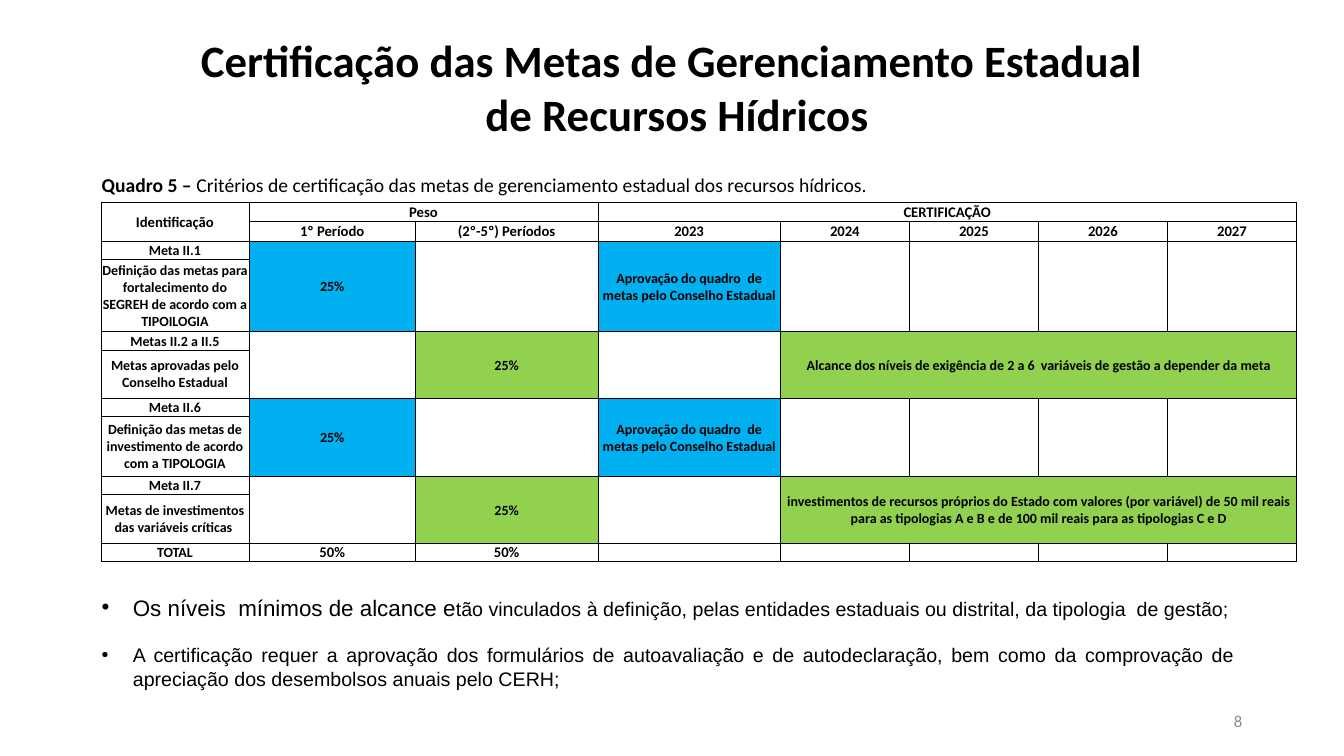
from lxml import etree
from pptx import Presentation
from pptx import util as u
from pptx.dml.color import RGBColor
from pptx.enum import text
from pptx.oxml import ns

BLACK = RGBColor(0x00, 0x00, 0x00)
WHITE = RGBColor(0xFF, 0xFF, 0xFF)
GRAY = RGBColor(0x8C, 0x8C, 0x8C)
BLUE = RGBColor(0x00, 0xB0, 0xF0)
GREEN = RGBColor(0x92, 0xD0, 0x50)

COLUMNS = [1.47, 1.65, 1.81, 1.81] + [1.28] * 4
ROWS = [0.17, 0.2, 0.17, 0.72, 0.18, 0.48, 0.17, 0.6, 0.17, 0.48, 0.17]
PERIODS = ["1º Período", "(2º-5º) Períodos", "2023", "2024", "2025", "2026", "2027"]
APPROVAL = "Aprovação do quadro  de metas pelo Conselho Estadual"
GOALS = [
    ("Meta II.1", "Definição das metas para fortalecimento do SEGREH de acordo com a TIPOILOGIA", APPROVAL, BLUE),
    ("Metas II.2 a II.5", "Metas aprovadas pelo Conselho Estadual",
     "Alcance dos níveis de exigência de 2 a 6  variáveis de gestão a depender da meta", GREEN),
    ("Meta II.6", "Definição das metas de investimento de acordo com a TIPOLOGIA", APPROVAL, BLUE),
    ("Meta II.7", "Metas de investimentos das variáveis críticas ",
     "investimentos de recursos próprios do Estado com valores (por variável) de 50 mil reais "
     "para as tipologias A e B e de 100 mil reais para as tipologias C e D", GREEN),
]


def apply(target, values):
    for name, value in values.items():
        setattr(target, name, value)


def add_span(para, words, size, font="Calibri", color=BLACK, bold=False):
    span = para.add_run()
    span.text = words
    apply(span.font, {"name": font, "size": u.Pt(size), "bold": bold})
    span.font.color.rgb = color


def add_text(page, box, paragraphs, align, format_values=None):
    frame = page.shapes.add_textbox(*[u.Inches(length) for length in box]).text_frame
    apply(frame, {"word_wrap": True, "auto_size": text.MSO_AUTO_SIZE.SHAPE_TO_FIT_TEXT})
    apply(frame, format_values or {})
    for index, spans in enumerate(paragraphs):
        para = frame.add_paragraph() if index else frame.paragraphs[0]
        para.alignment = align
        for span in spans:
            add_span(para, **span)
    return frame


def draw_title(page, box):
    lines = ["Certificação das Metas de Gerenciamento Estadual", " de Recursos Hídricos"]
    add_text(page, box, [[{"words": line, "size": 32, "bold": True}] for line in lines],
             text.PP_ALIGN.CENTER)


def draw_caption(page, box):
    add_text(page, box, [[
        {"words": "Quadro 5 –", "size": 14, "bold": True},
        {"words": " Critérios de certificação das metas de gerenciamento estadual dos recursos hídricos.",
         "size": 14},
    ]], text.PP_ALIGN.JUSTIFY)


def draw_notes(page, box):
    frame = add_text(page, box, [
        [{"words": "Os níveis  mínimos de alcance e", "size": 16, "font": "Arial"},
         {"words": "tão vinculados à definição, pelas entidades estaduais ou distrital, da tipologia  de gestão;",
          "size": 14, "font": "Arial"}],
        [{"words": "A certificação requer a aprovação dos formulários de autoavaliação e de autodeclaração, "
                   "bem como da comprovação de apreciação dos desembolsos anuais pelo CERH;",
          "size": 14, "font": "Arial"}],
    ], text.PP_ALIGN.JUSTIFY)
    frame.paragraphs[1].space_before = u.Pt(16)
    for para in frame.paragraphs:
        properties = para._p.get_or_add_pPr()
        properties.set("marL", str(u.Inches(0.31)))
        properties.set("indent", str(u.Inches(-0.31)))
        etree.SubElement(properties, ns.qn("a:buFont")).set("typeface", "Arial")
        etree.SubElement(properties, ns.qn("a:buChar")).set("char", "•")


def draw_page_number(page, box):
    add_text(page, box, [[{"words": "8", "size": 12, "color": GRAY}]], text.PP_ALIGN.RIGHT,
             {"auto_size": text.MSO_AUTO_SIZE.NONE, "vertical_anchor": text.MSO_ANCHOR.MIDDLE})


def style_cell(cell):
    inset = u.Inches(0.01)
    apply(cell, {"margin_left": inset, "margin_right": inset, "margin_top": inset,
                 "margin_bottom": 0, "vertical_anchor": text.MSO_ANCHOR.MIDDLE})
    for side in ("lnL", "lnR", "lnT", "lnB"):
        line = etree.SubElement(cell._tc.get_or_add_tcPr(), ns.qn("a:" + side), w=str(u.Pt(0.5)))
        fill = etree.SubElement(line, ns.qn("a:solidFill"))
        etree.SubElement(fill, ns.qn("a:srgbClr"), val=str(BLACK))
    cell.fill.solid()
    cell.fill.fore_color.rgb = WHITE
    etree.SubElement(cell.text_frame.paragraphs[0]._p, ns.qn("a:endParaRPr"), sz="1000")


def fill_cell(table, row, column, words="", size=10, color=WHITE, rows=1, columns=1,
              anchor=text.MSO_ANCHOR.MIDDLE):
    cell = table.cell(row, column)
    if rows * columns > 1:
        cell.merge(table.cell(row + rows - 1, column + columns - 1))
    cell.vertical_anchor = anchor
    cell.fill.fore_color.rgb = color
    if words:
        para = cell.text_frame.paragraphs[0]
        para.alignment = text.PP_ALIGN.CENTER
        add_span(para, words, size, bold=True)


def draw_goal(table, row, goal):
    name, description, criterion, color = goal
    fill_cell(table, row, 0, name)
    fill_cell(table, row + 1, 0, description)
    first_period = color == BLUE
    weight, target, width = (1, 3, 1) if first_period else (2, 4, 4)
    fill_cell(table, row, weight, "25%", color=color, rows=2)
    fill_cell(table, row, target, criterion, color=color, rows=2, columns=width)
    for column in (2, 4, 5, 6, 7) if first_period else (1, 3):
        fill_cell(table, row, column, rows=2)


def draw_criteria(page, box):
    frame = page.shapes.add_table(len(ROWS), len(COLUMNS), *[u.Inches(length) for length in box])
    table = frame.table
    apply(table, {"first_row": False, "horz_banding": False})
    for column, width in zip(table.columns, COLUMNS):
        column.width = u.Inches(width)
    for row, height in zip(table.rows, ROWS):
        row.height = u.Inches(height)
    for cell in table.iter_cells():
        style_cell(cell)
    bottom = text.MSO_ANCHOR.BOTTOM
    fill_cell(table, 0, 0, "Identificação", 10.5, rows=2)
    fill_cell(table, 0, 1, "Peso", 10.5, columns=2)
    fill_cell(table, 0, 3, "CERTIFICAÇÃO", 10.5, columns=5, anchor=bottom)
    for column, period in enumerate(PERIODS, 1):
        fill_cell(table, 1, column, period, 10.5)
    for index, goal in enumerate(GOALS):
        draw_goal(table, 2 + 2 * index, goal)
    total = len(ROWS) - 1
    fill_cell(table, total, 0, "TOTAL")
    for column in (1, 2):
        fill_cell(table, total, column, "50%", 10.5, anchor=bottom)


def main():
    deck = Presentation()
    apply(deck, {"slide_width": u.Inches(13.33), "slide_height": u.Inches(7.5)})
    page = deck.slides.add_slide(deck.slide_layouts[6])
    draw_title(page, (0, 0.28, 13.33, 1.18))
    draw_notes(page, (0.91, 5.84, 11.44, 1.08))
    draw_caption(page, (0.91, 1.67, 8.13, 0.34))
    draw_page_number(page, (9.42, 6.95, 3, 0.4))
    draw_criteria(page, (1, 2.01, 11.86, 3.54))
    deck.save("out.pptx")


if __name__ == "__main__":
    main()
